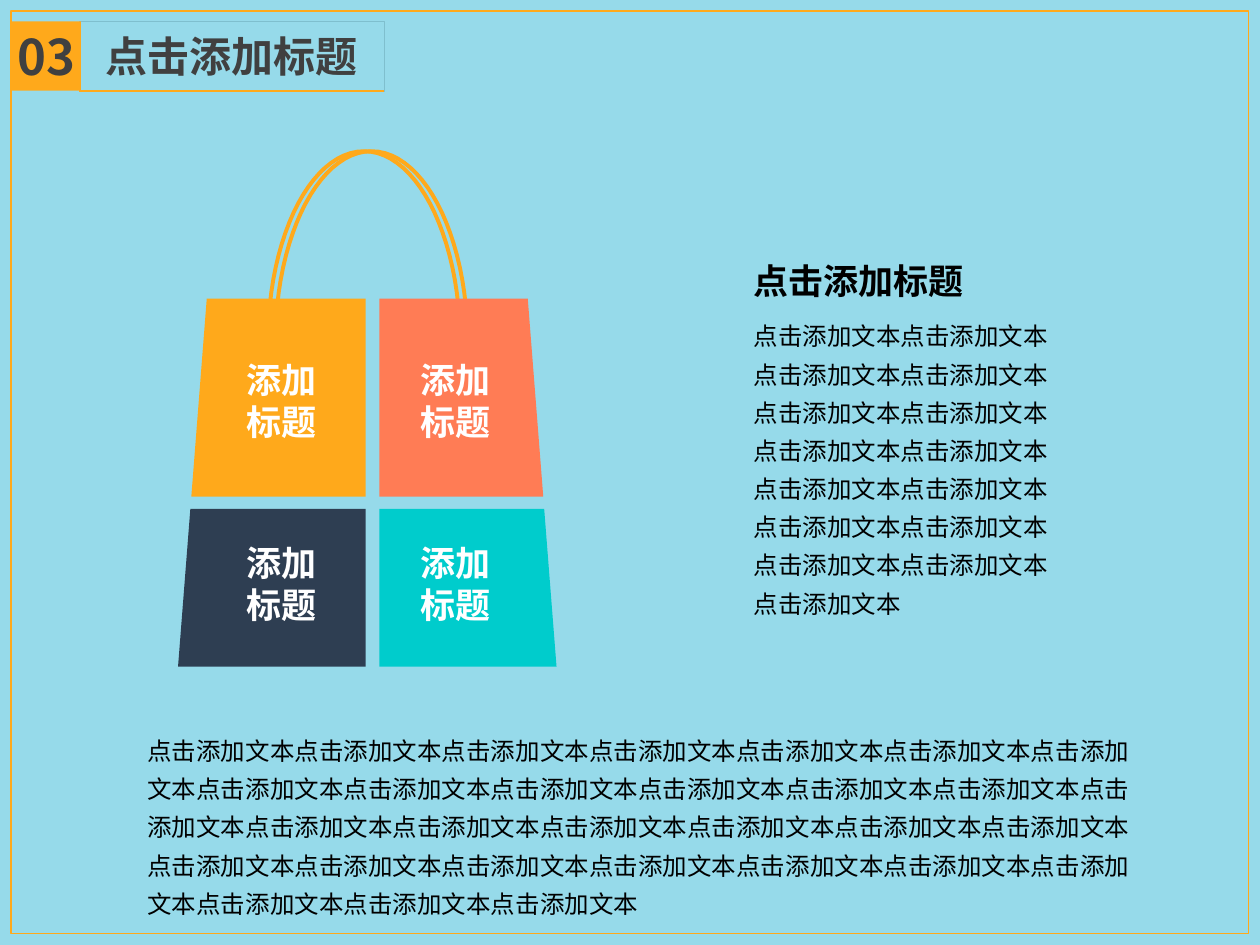
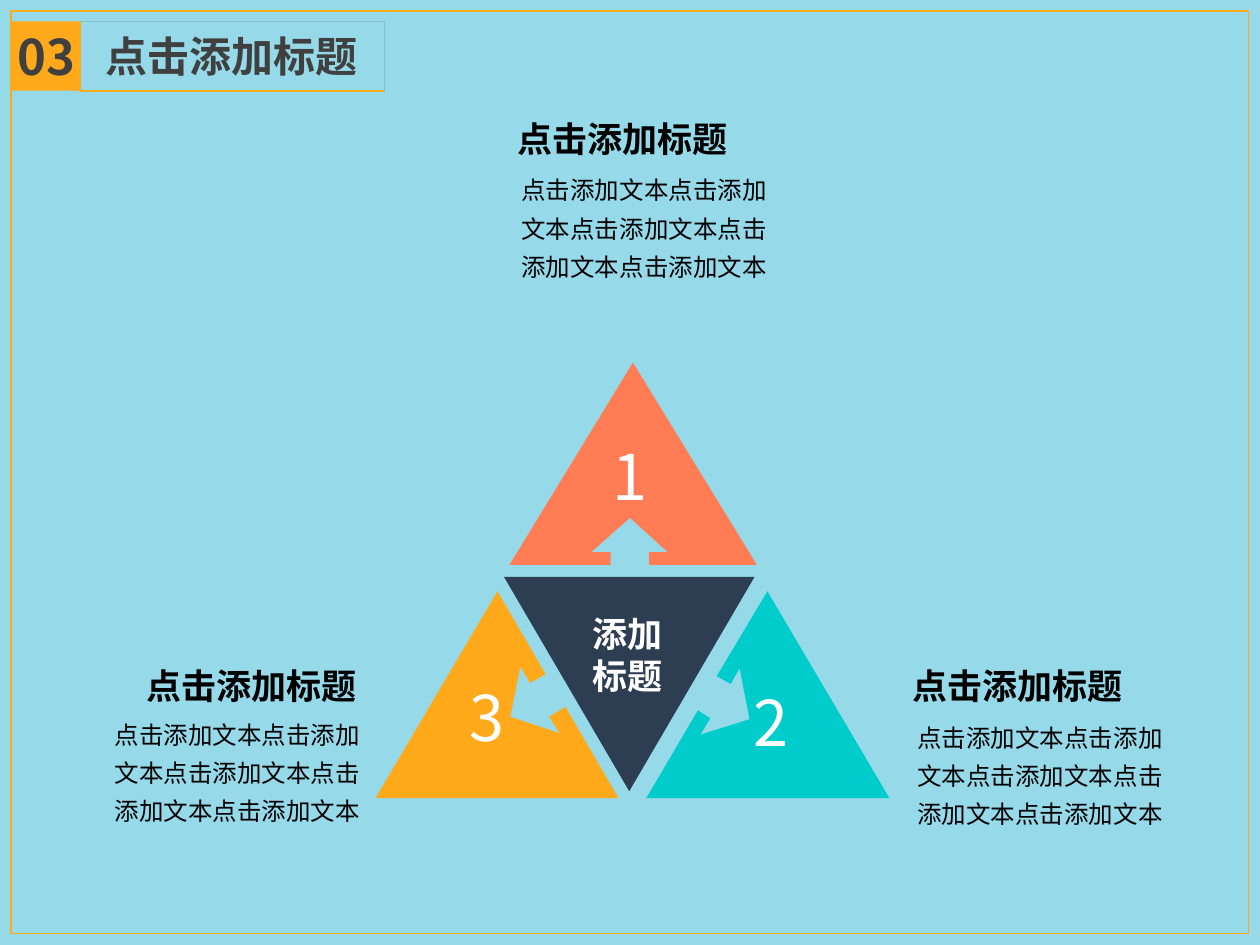
from dataclasses import dataclass

from lxml import etree
from pptx import Presentation
from pptx.dml.color import RGBColor
from pptx.enum.shapes import MSO_CONNECTOR, MSO_SHAPE
from pptx.enum.text import MSO_ANCHOR, MSO_AUTO_SIZE, PP_ALIGN
from pptx.oxml.ns import qn
from pptx.util import Cm, Pt

LEFT, CENTER = PP_ALIGN.LEFT, PP_ALIGN.CENTER
TOP, MIDDLE = MSO_ANCHOR.TOP, MSO_ANCHOR.MIDDLE
NO_FIT = MSO_AUTO_SIZE.NONE
RECTANGLE, TRIANGLE = MSO_SHAPE.RECTANGLE, MSO_SHAPE.ISOSCELES_TRIANGLE
STRAIGHT = MSO_CONNECTOR.STRAIGHT


# Theme: colours, font and text styles
@dataclass(frozen=True)
class Theme:
    font: str = "Noto Sans CJK SC"
    sky: str = "96DAEA"
    hairline: str = "7FBFCE"
    orange: str = "FFA91B"
    coral: str = "FF7C55"
    navy: str = "2E3E52"
    teal: str = "00CCCC"
    gray: str = "404040"
    black: str = "000000"
    white: str = "FFFFFF"


THEME = Theme()


def text_style(size, color, bold=False, align=CENTER, anchor=TOP,
               inset=(0.25, 0.13), spacing=1.0, wrap=True):
    return {
        "color": color,
        "inset": inset,
        "font": {"name": THEME.font, "size": Pt(size), "bold": bold},
        "para": {"alignment": align, "line_spacing": spacing,
                 "space_before": Pt(0), "space_after": Pt(0)},
        "frame": {"word_wrap": wrap, "vertical_anchor": anchor, "auto_size": NO_FIT},
    }


TIGHT = (0, 0)
STYLES = {
    "badge": text_style(28, THEME.gray, True, anchor=MIDDLE, inset=TIGHT),
    "title": text_style(24, THEME.gray, True, anchor=MIDDLE),
    "heading": text_style(20, THEME.black, True),
    "side heading": text_style(20, THEME.black, True, anchor=MIDDLE, inset=TIGHT),
    "body": text_style(14, THEME.black, align=LEFT, spacing=1.3),
    "side body": text_style(14, THEME.black, align=LEFT, spacing=1.3, inset=TIGHT),
    "label": text_style(20, THEME.white, True),
    "panel label": text_style(20, THEME.white, True, anchor=MIDDLE, inset=TIGHT),
    "number": text_style(36, THEME.white, align=LEFT, wrap=False),
}

# Content; all lengths in centimetres, boxes as left, top, width, height
SECTION = "03"
TITLE = "点击添加标题"
FILLER = "点击添加文本"
FRAME_BOX = (0.23, 0.23, 24.94, 18.59)
BADGE_BOX = (0.23, 0.43, 1.4, 1.4)
TITLE_BOX = (1.6, 0.43, 6.15, 1.4)

BAG = {
    "top": 6.02, "bottom": 13.44, "left": 4.17, "right": 10.64, "flare": 0.58,
    "inner": (7.37, 7.65),
    "rows": [(6.02, 10.01), (10.26, 13.44)],
    "colors": [(THEME.orange, THEME.coral), (THEME.navy, THEME.teal)],
    "label lefts": (4.47, 7.98),
    "label tops": (7.14, 10.82),
    "label size": (2.41, 1.88),
    "label": ["添加", "标题"],
}
HANDLE = {"lefts": (5.44, 5.59), "foot": 6.32,
          "curve": [(0, 6.15), (0.18, 4.37), (0.97, 3.05), (1.9, 3.05)]}
BAG_TEXTS = [
    ("side heading", (14.94, 5, 4.75, 1.3), [TITLE]),
    ("side body", (15.19, 6.3, 6.12, 5), [FILLER * 15]),
    ("body", (2.72, 14.53, 20.7, 4.04), [FILLER * 30]),
]

TRIANGLES = [
    (THEME.coral, [(12.76, 7.31), (15.26, 11.39), (13.08, 11.39), (13.08, 11.13),
                   (13.46, 11.13), (12.7, 10.44), (11.92, 11.13), (12.31, 11.13),
                   (12.31, 11.39), (10.27, 11.39)]),
    (THEME.teal, [(15.47, 11.92), (17.93, 16.09), (13.03, 16.09), (14.07, 14.32),
                  (14.32, 14.48), (14.12, 14.81), (15.11, 14.5), (14.91, 13.47),
                  (14.73, 13.79), (14.45, 13.63)]),
    (THEME.orange, [(10.03, 11.92), (11, 13.59), (10.69, 13.77), (10.49, 13.44),
                    (10.29, 14.45), (11.28, 14.78), (11.07, 14.45), (11.4, 14.25),
                    (12.47, 16.09), (7.57, 16.09)]),
]
CORE_BOX = (10.16, 11.63, 5.05, 4.32)
TRIANGLE_TEXTS = [
    ("label", (11.68, 12.22, 1.96, 1.96), ["添加标题"]),
    ("heading", (10.11, 2.24, 4.88, 1.12), [TITLE]),
    ("heading", (18.06, 13.26, 4.9, 1.12), [TITLE]),
    ("heading", (2.69, 13.26, 4.78, 1.12), [TITLE]),
    ("number", (12.09, 8.69, 1.27, 1.8), ["1"]),
    ("number", (14.94, 13.64, 1.27, 1.8), ["2"]),
    ("number", (9.22, 13.54, 1.27, 1.8), ["3"]),
    ("body", (2.06, 14.2, 5.51, 2.49), [FILLER * 5]),
    ("body", (18.24, 14.27, 5.51, 2.49), [FILLER * 5]),
    ("body", (10.26, 3.23, 5.51, 2.49), [FILLER * 5]),
]


# Drawing helpers
def assign(target, values):
    for name, value in values.items():
        setattr(target, name, value)


def place(shape, box):
    assign(shape, dict(zip(("left", "top", "width", "height"), map(Cm, box))))


def paint(shape, fill=None, line=None, weight=1.0):
    shape.shadow.inherit = False
    if fill:
        shape.fill.solid()
        shape.fill.fore_color.rgb = RGBColor.from_string(fill)
    else:
        shape.fill.background()
    if line:
        shape.line.color.rgb = RGBColor.from_string(line)
        shape.line.width = Pt(weight)
    else:
        shape.line.fill.background()
    return shape


def write(shape, style_name, lines):
    style = STYLES[style_name]
    frame = shape.text_frame
    across, down = map(Cm, style["inset"])
    assign(frame, {**style["frame"], "margin_left": across, "margin_right": across,
                   "margin_top": down, "margin_bottom": down})
    for index, line in enumerate(lines):
        para = frame.add_paragraph() if index else frame.paragraphs[0]
        assign(para, style["para"])
        span = para.add_run()
        span.text = line
        assign(span.font, style["font"])
        span.font.color.rgb = RGBColor.from_string(style["color"])
        # East Asian typeface, and no inherited bullet or indent
        etree.SubElement(span._r.get_or_add_rPr(), qn("a:ea"), typeface=THEME.font)
        settings = para._p.get_or_add_pPr()
        settings.set("marL", "0")
        settings.set("indent", "0")
        etree.SubElement(settings, qn("a:buNone"))


def add_preset(page, kind, box, **look):
    return paint(page.shapes.add_shape(kind, *map(Cm, box)), **look)


def add_outline(page, points, close=True, **look):
    start, *rest = [(Cm(x), Cm(y)) for x, y in points]
    builder = page.shapes.build_freeform(*start)
    builder.add_line_segments(rest, close=close)
    return paint(builder.convert_to_shape(), **look)


def add_texts(page, texts):
    bodies = [holder for holder in page.placeholders
              if holder.placeholder_format.idx > 0]
    for style_name, box, lines in texts:
        if bodies and style_name.endswith("body"):
            shape = bodies.pop(0)
            place(shape, box)
        else:
            shape = page.shapes.add_textbox(*map(Cm, box))
        write(shape, style_name, lines)


# Shared page: frame, section badge and underlined title
def add_page(deck, layout_name):
    page = deck.slides.add_slide(deck.slide_layouts.get_by_name(layout_name))
    add_preset(page, RECTANGLE, FRAME_BOX, line=THEME.orange)
    badge = add_preset(page, RECTANGLE, BADGE_BOX, fill=THEME.orange)
    write(badge, "badge", [SECTION])
    title = page.shapes.title
    place(title, TITLE_BOX)
    paint(title, line=THEME.hairline, weight=0.25)
    write(title, "title", [TITLE])
    left, top, width, height = TITLE_BOX
    underline = page.shapes.add_connector(
        STRAIGHT, *map(Cm, (left, top + height, left + width, top + height)))
    underline.line.color.rgb = RGBColor.from_string(THEME.orange)
    underline.line.width = Pt(1)
    etree.SubElement(underline._element.spPr, qn("a:effectLst"))
    return page


# Shopping bag page
def handle_points(left, steps=20):
    p0, p1, p2, p3 = HANDLE["curve"]
    rise = []
    for step in range(steps + 1):
        t = step / steps
        weights = ((1 - t) ** 3, 3 * t * (1 - t) ** 2, 3 * t * t * (1 - t), t ** 3)
        rise.append(tuple(sum(w * c for w, c in zip(weights, axis))
                          for axis in zip(p0, p1, p2, p3)))
    fall = [(2 * p3[0] - x, y) for x, y in reversed(rise[:-1])]
    return [(left, HANDLE["foot"])] + [(left + x, y) for x, y in rise + fall]


def flare_at(y):
    return BAG["flare"] * (y - BAG["top"]) / (BAG["bottom"] - BAG["top"])


def add_bag_page(deck):
    page = add_page(deck, "Two Content")
    for left in HANDLE["lefts"]:
        add_outline(page, handle_points(left), close=False,
                    line=THEME.orange, weight=2.25)
    inner_left, inner_right = BAG["inner"]
    for (top, bottom), (left_color, right_color) in zip(BAG["rows"], BAG["colors"]):
        for outer, inner, side, color in (
                (BAG["left"], inner_left, -1, left_color),
                (BAG["right"], inner_right, 1, right_color)):
            add_outline(page, [(inner, top), (outer + side * flare_at(top), top),
                               (outer + side * flare_at(bottom), bottom),
                               (inner, bottom)], fill=color)
    labels = [("panel label", (left, top, *BAG["label size"]), BAG["label"])
              for top in BAG["label tops"] for left in BAG["label lefts"]]
    add_texts(page, BAG_TEXTS + labels)


# Triangle page
def add_triangle_page(deck):
    page = add_page(deck, "Title Only")
    for color, points in TRIANGLES:
        add_outline(page, points, fill=color)
    core = add_preset(page, TRIANGLE, CORE_BOX, fill=THEME.navy)
    core.rotation = 180
    add_texts(page, TRIANGLE_TEXTS)


def main():
    deck = Presentation()
    assign(deck, {"slide_width": Cm(25.4), "slide_height": Cm(19.05)})
    backdrop = deck.slide_master.background.fill
    backdrop.solid()
    backdrop.fore_color.rgb = RGBColor.from_string(THEME.sky)
    add_bag_page(deck)
    add_triangle_page(deck)
    deck.save("out.pptx")


if __name__ == "__main__":
    main()
